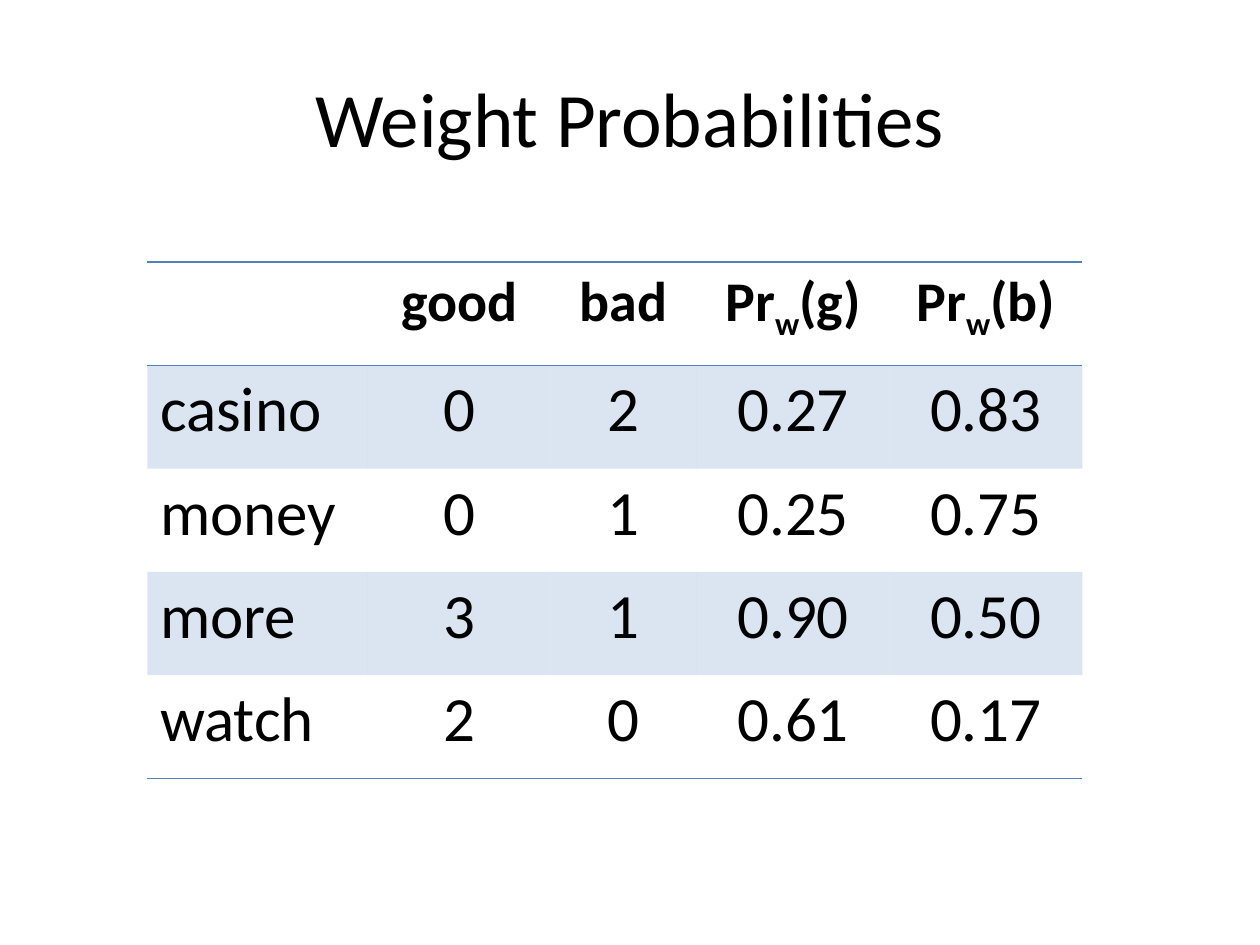
import pptx
import pptx.util
import pptx.dml.color
import pptx.enum.text
from lxml import etree
from pptx.oxml.ns import qn

Inches, Pt = pptx.util.Inches, pptx.util.Pt
RGB = pptx.dml.color.RGBColor
ALIGN = pptx.enum.text.PP_ALIGN
ANCHOR = pptx.enum.text.MSO_ANCHOR

# Content: each cell is a list of runs; "_" marks a subscript
TITLE = "Weight Probabilities"
HEADER = [[], ["good"], ["bad"], ["Pr", "_w", "(g)"], ["Pr", "_w", "(b)"]]
WORDS = [
    ("casino", "0", "2", "0.27", "0.83"),
    ("money", "0", "1", "0.25", "0.75"),
    ("more", "3", "1", "0.90", "0.50"),
    ("watch", "2", "0", "0.61", "0.17"),
]
COLORS = {"text": "000000", "accent": "4F81BD"}
FONT = "Calibri"
COL_WIDTHS = [1.75, 1.45, 1.16, 1.53, 1.53]
ROW_HEIGHT = 0.82


def add_run(p, text, size, bold=False):
    r = p.add_run()
    r.text = text.lstrip("_")
    r.font.name, r.font.size, r.font.bold = FONT, Pt(size), bold
    r.font.color.rgb = RGB.from_string(COLORS["text"])
    if text.startswith("_"):
        r.font._element.set("baseline", "-25000")


def set_borders(cell, ruled):
    tc_pr = cell._tc.get_or_add_tcPr()
    for side in "LRTB":
        ln = etree.SubElement(tc_pr, qn(f"a:ln{side}"), w=str(Pt(1)))
        if side in ruled:
            fill = etree.SubElement(ln, qn("a:solidFill"))
            etree.SubElement(fill, qn("a:srgbClr"), val=COLORS["accent"])
        else:
            etree.SubElement(ln, qn("a:noFill"))


def set_fill(cell, banded):
    if not banded:
        cell.fill.background()
        return
    cell.fill.solid()
    cell.fill.fore_color.rgb = RGB.from_string(COLORS["accent"])
    color = cell._tc.tcPr.find(qn("a:solidFill")).find(qn("a:srgbClr"))
    etree.SubElement(color, qn("a:alpha"), val="20000")


prs = pptx.Presentation()
prs.slide_width, prs.slide_height = Inches(10), Inches(7.5)
s = prs.slides.add_slide(prs.slide_layouts[6])

# Title
tf = s.shapes.add_textbox(Inches(0.5), Inches(0.3), Inches(9), Inches(1.25)).text_frame
tf.word_wrap = True
tf.vertical_anchor = ANCHOR.MIDDLE
tf.paragraphs[0].alignment = ALIGN.CENTER
add_run(tf.paragraphs[0], TITLE, 44)

# Table
rows = [HEADER] + [[[value] for value in row] for row in WORDS]
table = s.shapes.add_table(
    len(rows), len(COL_WIDTHS), Inches(1.17), Inches(2.08),
    Inches(sum(COL_WIDTHS)), Inches(ROW_HEIGHT * len(rows))).table
table.first_row = table.horz_banding = False
for column, width in zip(table.columns, COL_WIDTHS):
    column.width = Inches(width)

# Rules lie above and below the header and under the last row
ruled_sides = {0: "TB", 1: "T", len(rows) - 1: "B"}
for i, row in enumerate(rows):
    table.rows[i].height = Inches(ROW_HEIGHT)
    for j, runs in enumerate(row):
        cell = table.cell(i, j)
        set_borders(cell, ruled_sides.get(i, ""))
        set_fill(cell, i % 2 == 1)
        p = cell.text_frame.paragraphs[0]
        p.alignment = ALIGN.CENTER if j else ALIGN.LEFT
        for text in runs:
            add_run(p, text, 36 if i else 32, bold=i == 0)

prs.save("out.pptx")
